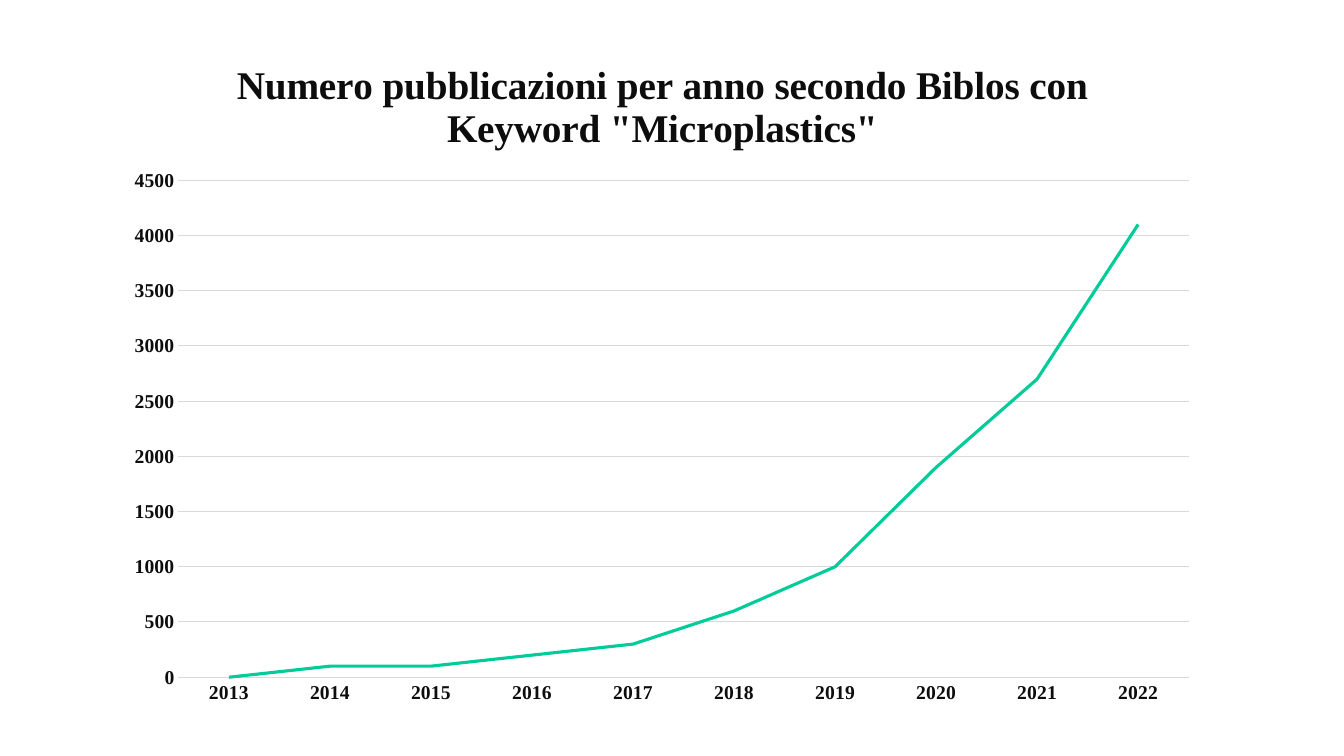
from lxml import etree
from pptx import Presentation
from pptx.chart.data import CategoryChartData
from pptx.dml.color import RGBColor
from pptx.enum.chart import XL_CHART_TYPE, XL_TICK_MARK
from pptx.enum.text import PP_ALIGN
from pptx.oxml.ns import qn
from pptx.util import Inches, Pt

LINE = XL_CHART_TYPE.LINE
NO_TICK = XL_TICK_MARK.NONE
CENTER = PP_ALIGN.CENTER
FONT = "Times New Roman"
COLORS = {"text": "0D0D0D", "grid": "D9D9D9", "series": "00CC99"}
CHART_W, CHART_H = 10.89, 6.7
TITLE = ["Numero pubblicazioni per anno secondo Biblos con",
         'Keyword "Microplastics"']
PUBLICATIONS = {2013: 0, 2014: 100, 2015: 100, 2016: 200, 2017: 300,
                2018: 600, 2019: 1000, 2020: 1900, 2021: 2700, 2022: 4100}


def style_font(font, size):
    values = {"name": FONT, "size": Pt(size), "bold": True}
    for name, value in values.items():
        setattr(font, name, value)
    font.color.rgb = RGBColor.from_string(COLORS["text"])


def set_layout(parent, before, **inches):
    """Place a chart part by x, y, w, h in inches within the chart."""
    for old in parent.findall(qn("c:layout")):
        parent.remove(old)
    layout = etree.Element(qn("c:layout"))
    manual = etree.SubElement(layout, qn("c:manualLayout"))
    settings = {"xMode": "edge", "yMode": "edge"}
    for tag, value in inches.items():
        settings[tag] = value / (CHART_W if tag in "xw" else CHART_H)
    for tag, value in settings.items():
        etree.SubElement(manual, qn("c:" + tag)).set("val", str(value))
    parent.insert(before, layout)


prs = Presentation()
prs.slide_width, prs.slide_height = Inches(13.33), Inches(7.5)
s = prs.slides.add_slide(prs.slide_layouts[6])

data = CategoryChartData()
data.categories = [str(year) for year in PUBLICATIONS]
data.add_series("Series 1", PUBLICATIONS.values())
chart = s.shapes.add_chart(LINE, Inches(1.12), Inches(0.41),
                           Inches(CHART_W), Inches(CHART_H), data).chart
chart.has_legend = False
chart.font.name, chart.font.size = FONT, Pt(10)

# Title
chart.has_title = True
title = chart.chart_title
title.include_in_layout = False
tf = title.text_frame
for i, text in enumerate(TITLE):
    p = tf.paragraphs[0] if i == 0 else tf.add_paragraph()
    p.alignment = CENTER
    r = p.add_run()
    r.text = text
    style_font(r.font, 28)
set_layout(title._element, 1, x=1.2, y=0.18)

# Axes
cat_axis, val_axis = chart.category_axis, chart.value_axis
for axis in (cat_axis, val_axis):
    axis.major_tick_mark = axis.minor_tick_mark = NO_TICK
    style_font(axis.tick_labels.font, 14)
val_axis.minimum_scale, val_axis.maximum_scale = 0, 4500
val_axis.major_unit = 500
val_axis.has_major_gridlines = True
val_axis.format.line.fill.background()

# Lines
series = chart.plots[0].series[0]
series.smooth = False
chart.plots[0].vary_by_categories = False
for line, color, width in (
        (cat_axis.format.line, "grid", 0.75),
        (val_axis.major_gridlines.format.line, "grid", 0.75),
        (series.format.line, "series", 2.25)):
    line.color.rgb = RGBColor.from_string(COLORS[color])
    line.width = Pt(width)

plot_area = chart._chartSpace.chart.plotArea
set_layout(plot_area, 0, x=0.65, y=1.38, w=10.02, h=4.93)
target = etree.Element(qn("c:layoutTarget"))
target.set("val", "inner")
plot_area[0][0].insert(0, target)

prs.save("out.pptx")
